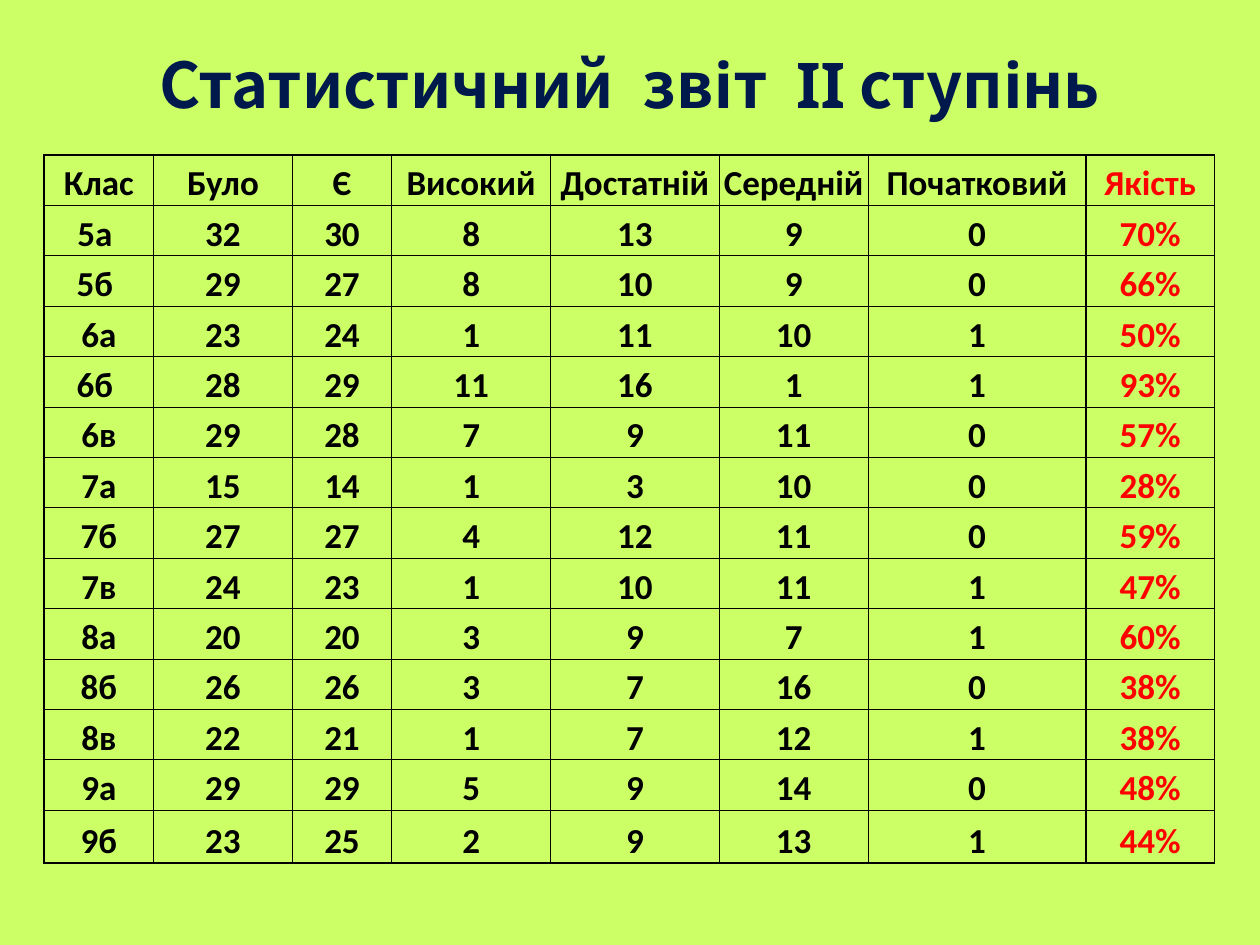
from typing import NamedTuple

from lxml.etree import SubElement
from pptx import Presentation
from pptx.dml.color import RGBColor
from pptx.enum.text import MSO_ANCHOR, PP_ALIGN
from pptx.oxml.ns import qn
from pptx.util import Inches, Pt

LIME = RGBColor(0xCC, 0xFF, 0x66)
NAVY = RGBColor(0x00, 0x19, 0x4C)
BLACK = RGBColor(0x00, 0x00, 0x00)
RED = RGBColor(0xFF, 0x00, 0x00)

SLIDE_W, SLIDE_H = Inches(10), Inches(7.5)
THIN, THICK = Pt(0.5), Pt(1)
ROW_H, LAST_ROW_H = Inches(0.4), Inches(0.42)


class Column(NamedTuple):
    heading: str
    width: float
    color: RGBColor = BLACK


class ClassResult(NamedTuple):
    name: str
    before: int
    now: int
    high: int
    sufficient: int
    average: int
    beginner: int
    quality: str


COLUMNS = [
    Column("Клас", 0.87),
    Column("Було", 1.1),
    Column("Є", 0.79),
    Column("Високий", 1.26),
    Column("Достатній", 1.34),
    Column("Середній", 1.18),
    Column("Початковий", 1.73),
    Column("Якість", 1.02, RED),
]

RESULTS = [
    ClassResult("5а ", 32, 30, 8, 13, 9, 0, "70%"),
    ClassResult("5б ", 29, 27, 8, 10, 9, 0, "66%"),
    ClassResult("6а", 23, 24, 1, 11, 10, 1, "50%"),
    ClassResult("6б ", 28, 29, 11, 16, 1, 1, "93%"),
    ClassResult("6в", 29, 28, 7, 9, 11, 0, "57%"),
    ClassResult("7а", 15, 14, 1, 3, 10, 0, "28%"),
    ClassResult("7б", 27, 27, 4, 12, 11, 0, "59%"),
    ClassResult("7в", 24, 23, 1, 10, 11, 1, "47%"),
    ClassResult("8а", 20, 20, 3, 9, 7, 1, "60%"),
    ClassResult("8б", 26, 26, 3, 7, 16, 0, "38%"),
    ClassResult("8в", 22, 21, 1, 7, 12, 1, "38%"),
    ClassResult("9а", 29, 29, 5, 9, 14, 0, "48%"),
    ClassResult("9б", 23, 25, 2, 9, 13, 1, "44%"),
]


def write(frame, text: str, *, size: float, font: str, color: RGBColor) -> None:
    """Put one bold, centred line into a text frame."""
    line = frame.paragraphs[0]
    line.alignment = PP_ALIGN.CENTER
    run = line.add_run()
    run.text = text
    run.font.size = Pt(size)
    run.font.name = font
    run.font.bold = True
    run.font.color.rgb = color


def draw_borders(cell, widths: dict[str, int]) -> None:
    properties = cell._tc.get_or_add_tcPr()
    for side in ("L", "R", "T", "B"):
        border = SubElement(properties, qn(f"a:ln{side}"), w=str(int(widths[side])))
        fill = SubElement(border, qn("a:solidFill"))
        SubElement(fill, qn("a:srgbClr"), val=str(BLACK))


def format_cell(cell, text: str, color: RGBColor) -> None:
    cell.margin_left = cell.margin_right = cell.margin_top = Inches(0.01)
    cell.margin_bottom = 0
    cell.vertical_anchor = MSO_ANCHOR.BOTTOM
    write(cell.text_frame, text, size=20, font="Calibri", color=color)


def add_title(slide, text: str) -> None:
    title = slide.shapes.title
    title.left, title.top = 0, Inches(0.25)
    title.width, title.height = SLIDE_W, Inches(0.83)
    title.text_frame.word_wrap = True
    title.text_frame.vertical_anchor = MSO_ANCHOR.MIDDLE
    write(title.text_frame, text, size=36, font="Noto Sans CJK KR", color=NAVY)


def add_results_table(slide) -> None:
    rows = [[column.heading for column in COLUMNS], *RESULTS]
    last_row, last_col = len(rows) - 1, len(COLUMNS) - 1
    width = Inches(sum(column.width for column in COLUMNS))
    height = ROW_H * last_row + LAST_ROW_H
    table = slide.shapes.add_table(
        len(rows), len(COLUMNS), Inches(0.35), Inches(1.23), width, height
    ).table
    table.first_row = table.horz_banding = False

    for c, column in enumerate(COLUMNS):
        table.columns[c].width = Inches(column.width)
    for r, values in enumerate(rows):
        table.rows[r].height = LAST_ROW_H if r == last_row else ROW_H
        for c, value in enumerate(values):
            cell = table.cell(r, c)
            format_cell(cell, str(value), COLUMNS[c].color)
            # Thick frame round the table and round the quality column
            draw_borders(cell, {
                "L": THICK if c in (0, last_col) else THIN,
                "R": THICK if c >= last_col - 1 else THIN,
                "T": THICK if r == 0 else THIN,
                "B": THICK if r == last_row else THIN,
            })
            cell.fill.background()


def main() -> None:
    deck = Presentation()
    deck.slide_width, deck.slide_height = SLIDE_W, SLIDE_H
    slide = deck.slides.add_slide(deck.slide_layouts[5])

    # Background
    slide.background.fill.solid()
    slide.background.fill.fore_color.rgb = LIME

    # Title and table of results by class
    add_title(slide, "Статистичний  звіт  ІІ ступінь")
    add_results_table(slide)
    deck.save("out.pptx")


if __name__ == "__main__":
    main()
